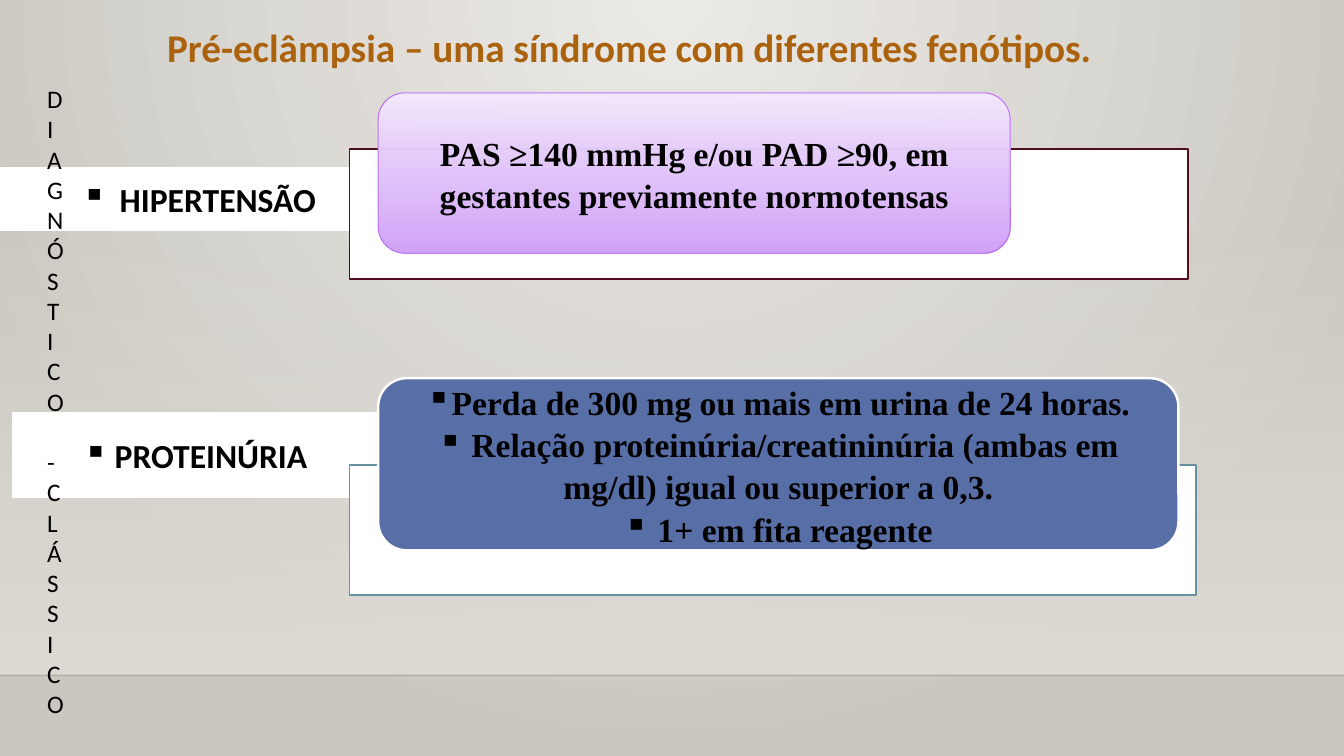
from lxml.etree import SubElement
from pptx import Presentation
from pptx.dml.color import RGBColor
from pptx.enum.shapes import MSO_CONNECTOR, MSO_SHAPE
from pptx.enum.text import MSO_ANCHOR, PP_ALIGN
from pptx.oxml.ns import qn
from pptx.util import Cm, Pt

BLACK = RGBColor(0x00, 0x00, 0x00)
WHITE = RGBColor(0xFF, 0xFF, 0xFF)
BROWN = RGBColor(0xAB, 0x62, 0x0D)
WINE = RGBColor(0x50, 0x0D, 0x1D)
TEAL = RGBColor(0x68, 0x92, 0xA0)
BLUE = RGBColor(0x58, 0x6E, 0xA6)
VIOLET = RGBColor(0xBC, 0x72, 0xF0)
LILAC = RGBColor(0xF4, 0xEA, 0xFD)
MAUVE = RGBColor(0xCE, 0x9C, 0xF7)
PALE = RGBColor(0xEC, 0xEA, 0xE7)
STONE = RGBColor(0xCA, 0xC7, 0xC1)
SAND = RGBColor(0xDF, 0xDB, 0xD5)
SANS, SERIF = "Calibri", "Times New Roman"


def add_alpha(color, percent):
    SubElement(color, qn("a:alpha"), val=str(percent * 1000))


def set_grad(owner, fill, stops, glow=False):
    fill.gradient()
    grad = next(owner.element.iter(qn("a:gradFill")))
    for child in list(grad):
        grad.remove(child)
    items = SubElement(grad, qn("a:gsLst"))
    for pos, (color, alpha) in zip((0, 100000), stops):
        stop = SubElement(items, qn("a:gs"), pos=str(pos))
        add_alpha(SubElement(stop, qn("a:srgbClr"), val=str(color)), alpha)
    if glow:
        shade = SubElement(grad, qn("a:path"), path="circle")
        SubElement(shade, qn("a:fillToRect"), l="43000", t="0", r="43000", b="100000")
    else:
        SubElement(grad, qn("a:lin"), ang="5400000", scaled="0")


def add_box(slide, place, fill, line=None, width=1.25, kind=MSO_SHAPE.RECTANGLE):
    box = slide.shapes.add_shape(kind, *map(Cm, place))
    box.shadow.inherit = False
    if isinstance(fill, RGBColor):
        box.fill.solid()
        box.fill.fore_color.rgb = fill
    else:
        set_grad(box, box.fill, fill)
    if line is None:
        box.line.fill.background()
    else:
        box.line.color.rgb = line
        box.line.width = Pt(width)
    return box


def set_font(para, name, size, color=BLACK, bold=True):
    font = para.font
    font.name, font.size, font.bold = name, Pt(size), bold
    font.color.rgb = color


def write(box, lines, name, indent=None, spacing=None):
    frame = box.text_frame
    frame.word_wrap = True
    frame.vertical_anchor = MSO_ANCHOR.MIDDLE
    for i, line in enumerate(lines):
        para = frame.add_paragraph() if i else frame.paragraphs[0]
        para.text = line
        para.alignment = PP_ALIGN.CENTER
        if spacing:
            para.line_spacing = spacing
        if indent is not None:
            props = para._p.get_or_add_pPr()
            props.set("marL", str(Cm(indent)))
            props.set("indent", str(-Cm(indent)))
            SubElement(props, qn("a:buChar"), char="▪")
        set_font(para, name, 24)


def add_floor(slide):
    add_box(slide, (0, 5.61, 33.87, 11.41), [(SAND, 0), (SAND, 100)])
    edge = slide.shapes.add_connector(
        MSO_CONNECTOR.STRAIGHT, 0, Cm(17.02), Cm(33.87), Cm(17.02))
    edge.line.color.rgb = BLACK
    edge.line.width = Pt(1)
    add_alpha(next(edge.element.iter(qn("a:srgbClr"))), 20)
    SubElement(edge.element.spPr, qn("a:effectLst"))


def add_title(slide, text):
    title = slide.shapes.title
    title.left, title.top, title.width, title.height = map(Cm, (3.66, 0.41, 24.61, 1.55))
    title.text_frame.text = text
    title.text_frame.vertical_anchor = MSO_ANCHOR.MIDDLE
    para = title.text_frame.paragraphs[0]
    para.alignment = PP_ALIGN.CENTER
    set_font(para, SANS, 28, BROWN)


def add_side(slide, words):
    box = slide.shapes.add_textbox(*map(Cm, (0.94, 1.98, 0.76, 15.65)))
    frame = box.text_frame
    frame.word_wrap = True
    for i, word in enumerate(words):
        para = frame.add_paragraph() if i else frame.paragraphs[0]
        para.text = word
        if word == "-":
            para.space_before = Pt(21.6)
        set_font(para, SANS, 18, bold=False)


def main():
    """Build the slide on the diagnosis of pre-eclampsia."""
    deck = Presentation()
    deck.slide_width, deck.slide_height = Cm(33.87), Cm(19.05)
    slide = deck.slides.add_slide(deck.slide_layouts[5])
    set_grad(slide, slide.background.fill, [(PALE, 100), (STONE, 100)], glow=True)
    add_floor(slide)
    add_title(slide, "Pré-eclâmpsia – uma síndrome com diferentes fenótipos. ")

    label = add_box(slide, (0, 4.24, 10.03, 1.55), WHITE, WHITE)
    write(label, ["HIPERTENSÃO"], SANS, indent=0.95)
    add_box(slide, (8.81, 3.76, 21.13, 3.28), WHITE, WINE)
    card = add_box(slide, (9.53, 2.34, 15.93, 4.04), [(LILAC, 100), (MAUVE, 92)],
                   VIOLET, 0.75, MSO_SHAPE.ROUNDED_RECTANGLE)
    write(card, ["PAS ≥140 mmHg e/ou PAD ≥90, em gestantes previamente normotensas"],
          SERIF, spacing=1.05)

    label = add_box(slide, (0.33, 10.41, 9.19, 2.13), WHITE, WHITE)
    write(label, ["PROTEINÚRIA"], SANS, indent=0.79)
    add_box(slide, (8.81, 11.71, 21.34, 3.28), WHITE, TEAL)
    card = add_box(slide, (9.53, 9.53, 20.17, 4.34), BLUE,
                   WHITE, 1.75, MSO_SHAPE.ROUNDED_RECTANGLE)
    write(card, [
        "Perda de 300 mg ou mais em urina de 24 horas.",
        " Relação proteinúria/creatininúria (ambas em mg/dl) igual ou superior a 0,3.",
        " 1+ em fita reagente",
    ], SERIF, indent=0, spacing=1.05)

    add_side(slide, ["DIAGNÓSTICO", "-", "CLÁSSICO"])
    deck.save("out.pptx")


if __name__ == "__main__":
    main()
